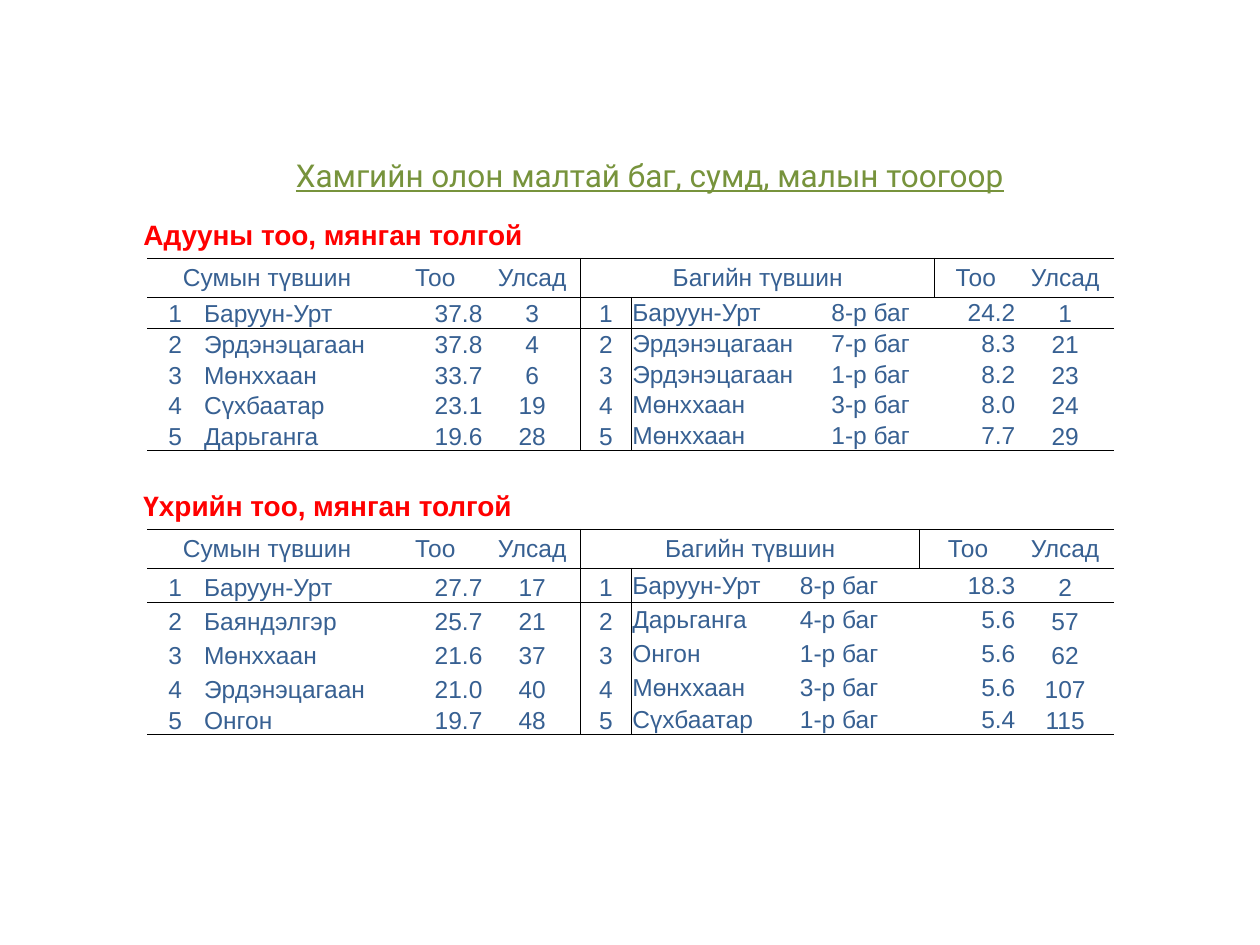
from dataclasses import dataclass

from lxml.etree import SubElement
from pptx import Presentation
from pptx.dml.color import RGBColor
from pptx.enum.text import MSO_ANCHOR as ANCHOR, PP_ALIGN as ALIGN
from pptx.oxml.ns import qn
from pptx.util import Inches, Pt

GREEN = RGBColor(0x77, 0x93, 0x3C)
RED = RGBColor(0xFF, 0x00, 0x00)
BLUE = RGBColor(0x37, 0x60, 0x92)
BLACK = RGBColor(0x00, 0x00, 0x00)

PLAIN_STYLE = "{2D5ABB26-0587-4C30-8999-92F81FD0307C}"
HEADER = ("Сумын түвшин", "", "Тоо", "Улсад", "Багийн түвшин", "", "", "Тоо", "Улсад")
HEADER_SPANS = ((0, 1), (4, 6))
SUM_WIDTHS = (0.44, 1.46, 0.77, 0.77)
BODY_ALIGN = (ALIGN.CENTER, ALIGN.LEFT, ALIGN.RIGHT, ALIGN.CENTER, ALIGN.CENTER,
              ALIGN.LEFT, ALIGN.LEFT, ALIGN.RIGHT, ALIGN.CENTER)
MIDDLE_COLS = (5, 6, 7)
DIVIDER = 4


@dataclass
class Livestock:
    title: str
    title_top: float
    table_top: float
    bag_widths: tuple[float, ...]
    heights: tuple[float, ...]
    sums: list[tuple[str, str, str]]
    bags: list[tuple[str, str, str, str]]

    def rows(self) -> list[tuple[str, ...]]:
        ranks = zip(self.sums, self.bags)
        return [HEADER] + [(str(n), *soum, str(n), *bag)
                           for n, (soum, bag) in enumerate(ranks, 1)]


HORSES = Livestock(
    "Адууны тоо, мянган толгой", 1.68, 2.05,
    (0.4, 1.58, 0.83, 0.65, 0.77), (0.31, 0.22, 0.23, 0.23, 0.24, 0.23),
    [("Баруун-Урт", "37.8", "3"), ("Эрдэнэцагаан", "37.8", "4"),
     ("Мөнххаан", "33.7", "6"), ("Сүхбаатар", "23.1", "19"),
     ("Дарьганга", "19.6", "28")],
    [("Баруун-Урт", "8-р баг", "24.2", "1"),
     ("Эрдэнэцагаан", "7-р баг", "8.3", "21"),
     ("Эрдэнэцагаан", "1-р баг", "8.2", "23"),
     ("Мөнххаан", "3-р баг", "8.0", "24"),
     ("Мөнххаан", "1-р баг", "7.7", "29")])
CATTLE = Livestock(
    "Үхрийн тоо, мянган толгой", 3.83, 4.2,
    (0.4, 1.33, 0.96, 0.77, 0.77), (0.31, 0.27, 0.27, 0.27, 0.27, 0.23),
    [("Баруун-Урт", "27.7", "17"), ("Баяндэлгэр", "25.7", "21"),
     ("Мөнххаан", "21.6", "37"), ("Эрдэнэцагаан", "21.0", "40"),
     ("Онгон", "19.7", "48")],
    [("Баруун-Урт", "8-р баг", "18.3", "2"),
     ("Дарьганга", "4-р баг", "5.6", "57"),
     ("Онгон", "1-р баг", "5.6", "62"),
     ("Мөнххаан", "3-р баг", "5.6", "107"),
     ("Сүхбаатар", "1-р баг", "5.4", "115")])


def write(tf, text: str, *, size=14, font="Arial", color=BLUE, bold=False,
          underline=False, align=ALIGN.LEFT) -> None:
    p = tf.paragraphs[0]
    p.alignment = align
    r = p.add_run()
    r.text = text
    r.font.size = Pt(size)
    r.font.name = font
    r.font.color.rgb = color
    r.font.bold = bold
    r.font.underline = underline


def add_text(s, text: str, left: float, top: float, height: float, **fmt) -> None:
    sp = s.shapes.add_textbox(Inches(left), Inches(top), Inches(5.83), Inches(height))
    sp.text_frame.word_wrap = True
    write(sp.text_frame, text, **fmt)


def add_borders(cell, row: int, col: int, last_row: int) -> None:
    edges = {"lnL": col == DIVIDER, "lnR": col == DIVIDER - 1,
             "lnT": row <= 1, "lnB": row in (0, last_row)}
    tc_pr = cell._tc.get_or_add_tcPr()
    for edge, shown in edges.items():
        if shown:
            ln = SubElement(tc_pr, qn(f"a:{edge}"), w=str(Pt(0.5)))
            fill = SubElement(ln, qn("a:solidFill"))
            SubElement(fill, qn("a:srgbClr"), val=str(BLACK))


def add_table(s, group: Livestock) -> None:
    rows = group.rows()
    widths = SUM_WIDTHS + group.bag_widths
    frame = s.shapes.add_table(len(rows), len(widths), Inches(1.17),
                               Inches(group.table_top), Inches(sum(widths)),
                               Inches(sum(group.heights)))
    table = frame.table
    table.first_row = table.horz_banding = False
    table._tbl.tblPr.find(qn("a:tableStyleId")).text = PLAIN_STYLE
    for column, width in zip(table.columns, widths):
        column.width = Inches(width)
    for first, last in HEADER_SPANS:
        table.cell(0, first).merge(table.cell(0, last))
    for i, (texts, height) in enumerate(zip(rows, group.heights)):
        table.rows[i].height = Inches(height)
        for j, text in enumerate(texts):
            cell = table.cell(i, j)
            cell.margin_left = cell.margin_right = cell.margin_top = Inches(0.01)
            cell.margin_bottom = 0
            middle = i == 0 or j in MIDDLE_COLS
            cell.vertical_anchor = ANCHOR.MIDDLE if middle else ANCHOR.BOTTOM
            add_borders(cell, i, j, len(rows) - 1)
            cell.fill.background()
            if text:
                write(cell.text_frame, text,
                      align=BODY_ALIGN[j] if i else ALIGN.CENTER)


def main() -> None:
    prs = Presentation()
    prs.slide_width, prs.slide_height = Inches(10), Inches(7.5)
    s = prs.slides.add_slide(prs.slide_layouts[6])
    add_text(s, "Хамгийн олон малтай баг, сумд, малын тоогоор", 2.25, 1.19, 0.4,
             size=18, font="Roboto", color=GREEN, underline=True)
    for group in (HORSES, CATTLE):
        add_text(s, group.title, 1.04, group.title_top, 0.37,
                 size=16, color=RED, bold=True)
        add_table(s, group)
    prs.save("out.pptx")


if __name__ == "__main__":
    main()
